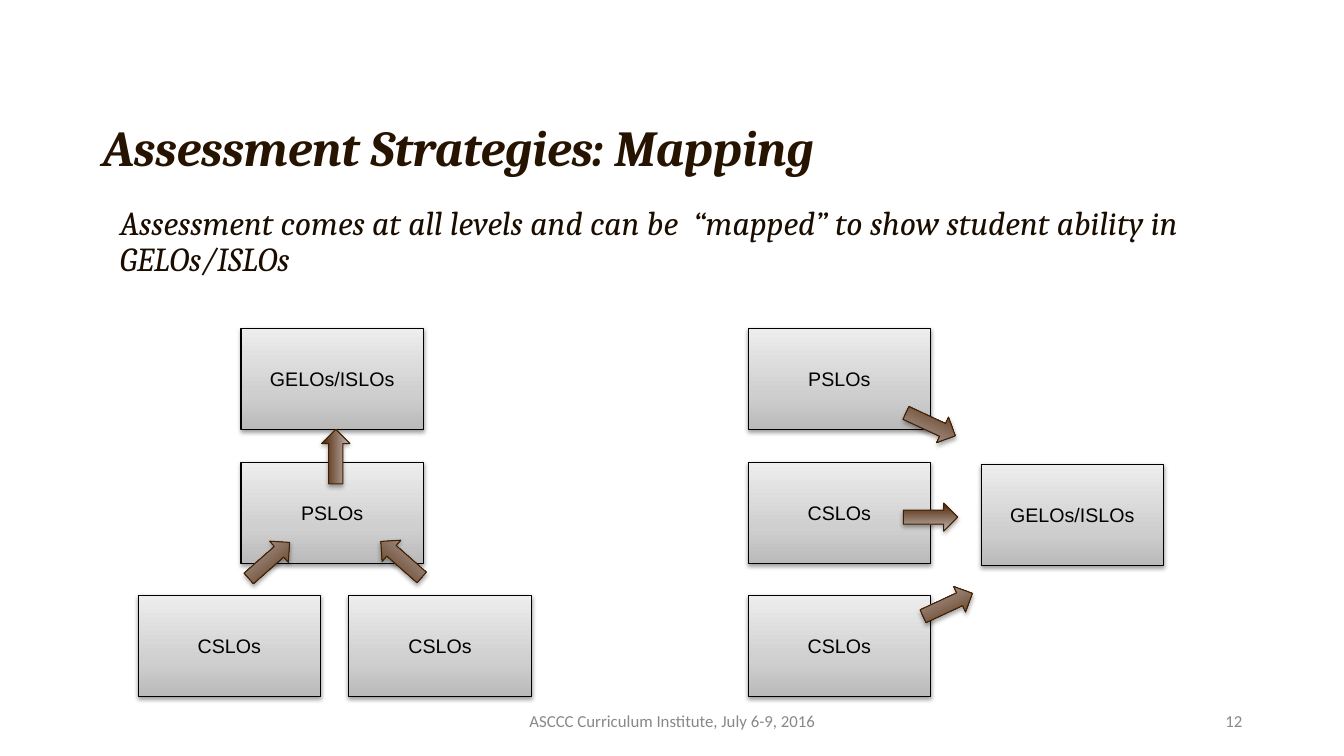
from lxml import etree
from pptx import Presentation
from pptx.dml.color import RGBColor
from pptx.enum.shapes import MSO_SHAPE
from pptx.enum.text import MSO_ANCHOR, PP_ALIGN
from pptx.oxml import parse_xml
from pptx.util import Pt

PX = 9144
NS = 'xmlns:a="http://schemas.openxmlformats.org/drawingml/2006/main"'
RECT, ARROW = MSO_SHAPE.RECTANGLE, MSO_SHAPE.RIGHT_ARROW
TOP, MIDDLE = MSO_ANCHOR.TOP, MSO_ANCHOR.MIDDLE
LEFT, CENTER, RIGHT = PP_ALIGN.LEFT, PP_ALIGN.CENTER, PP_ALIGN.RIGHT


def write(sp, text, font, size, color, align, anchor, slanted=False):
    tf = sp.text_frame
    tf.word_wrap = True
    tf.vertical_anchor = anchor
    p = tf.paragraphs[0]
    p.alignment = align
    r = p.add_run()
    r.text = text
    r.font.name = font
    r.font.size = Pt(size)
    r.font.italic = slanted
    r.font.color.rgb = RGBColor.from_string(color)
    return p


def add_block(group, kind, box, stops, line, alpha, dist):
    sp = group.shapes.add_shape(kind, *[v * PX for v in box])
    spPr = sp._element.spPr
    gs = "".join(f'<a:gs pos="{pos * 1000}"><a:srgbClr val="{c}"/></a:gs>' for pos, c in stops)
    spPr.append(parse_xml(f'<a:gradFill {NS} rotWithShape="1"><a:gsLst>{gs}</a:gsLst>'
                          '<a:lin ang="16200000" scaled="0"/></a:gradFill>'))
    sp.line.color.rgb = RGBColor.from_string(line)
    sp.line.width = Pt(0.75)
    spPr.append(etree.fromstring(
        f'<a:effectLst {NS}><a:outerShdw blurRad="40000" dist="{dist}" dir="5400000" '
        f'rotWithShape="0"><a:srgbClr val="000000"><a:alpha val="{alpha * 1000}"/>'
        '</a:srgbClr></a:outerShdw></a:effectLst>'))
    return sp


prs = Presentation()
prs.slide_width = 1333 * PX
prs.slide_height = 750 * PX
s = prs.slides.add_slide(prs.slide_layouts[6])

texts = [
    ((92, 99, 1150, 100), "Assessment Strategies: Mapping",
     "Cambria", 36, "261300", LEFT, MIDDLE, True),
    ((92, 200, 1150, 476),
     "Assessment comes at all levels and can be  “mapped” to show student ability in GELOs/ISLOs",
     "Cambria", 24, "1A0D00", LEFT, TOP, True),
    ((442, 695, 450, 40), "ASCCC Curriculum Institute, July 6-9, 2016",
     "Calibri", 12, "888888", CENTER, MIDDLE),
    ((942, 695, 300, 40), "12", "Calibri", 12, "888888", RIGHT, MIDDLE),
]
title, body, footer, number = [
    write(s.shapes.add_textbox(*[v * PX for v in box]), *style) for box, *style in texts]
title.line_spacing = body.line_spacing = 0.9
title.runs[0].font.bold = True
body._p.get_or_add_pPr().set("marL", str(17 * PX))

GREY = [(0, "BABABA"), (35, "CFCFCF"), (100, "EDEDED")]
BROWN = [(0, "4B2100"), (100, "C3B8B5")]
ROW_1, ROW_2, ROW_3 = 326, 459, 591

diagrams = [
    ([(137, ROW_3, "CSLOs"), (239, ROW_2, "PSLOs"),
      (346, ROW_3, "CSLOs"), (239, ROW_1, "GELOs/ISLOs")],
     [(240, 542, 318.6, False), (371, 541, 41.4, True), (306, 439, 90, True)]),
    ([(742, ROW_3, "CSLOs"), (742, ROW_1, "PSLOs"),
      (742, ROW_2, "CSLOs"), (973, 461, "GELOs/ISLOs")],
     [(896, 407, 204.9, True), (896, 499, 180, True), (913, 586, 335.1, False)]),
]
for boxes, arrows in diagrams:
    group = s.shapes.add_group_shape()
    for x, y, label in boxes:
        sp = add_block(group, RECT, (x, y, 181, 100), GREY, "000000", 38, 20000)
        write(sp, label, "Arial", 14, "000000", CENTER, MIDDLE)
    for x, y, angle, flipped in arrows:
        sp = add_block(group, ARROW, (x, y, 54, 28), BROWN, "412000", 35, 23000)
        sp.rotation = angle
        if flipped:
            sp._element.spPr.xfrm.set("flipH", "1")

prs.save("out.pptx")
